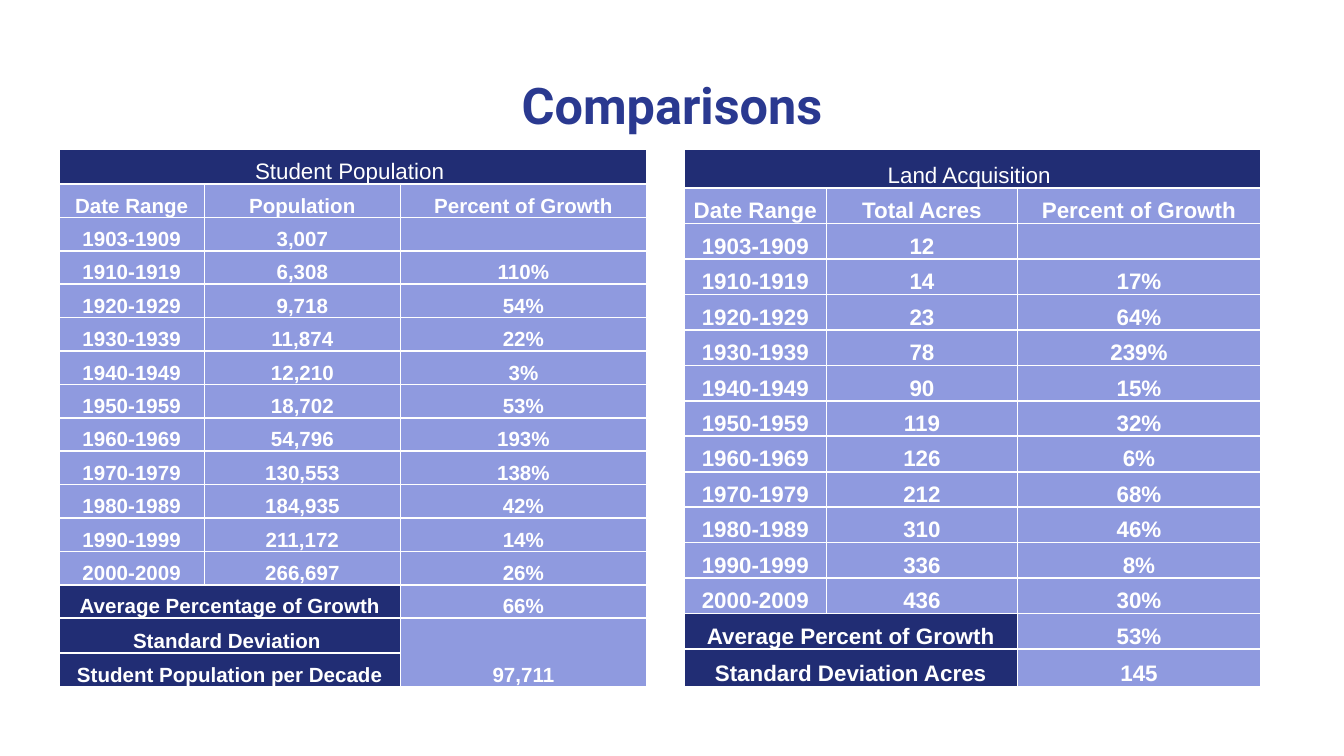
from dataclasses import dataclass

from lxml import etree
from pptx import Presentation
from pptx.dml.color import RGBColor
from pptx.enum import text as t
from pptx.oxml import ns
from pptx.util import Inches, Pt

HUES = {"title": "2A3990", "dark": "212D74", "light": "8F9ADF", "white": "FFFFFF"}
TOP, HIGH = 1.11, 4
DATES = ["1903-1909"] + [f"{y}-{y + 9}" for y in range(1910, 2010, 10)]


@dataclass
class Grid:
    left: float
    cols: list[float]
    size: int
    head: float         # height of the heading row
    tail: list[float]   # heights of the last rows
    name: str
    unit: str
    counts: list[str]
    growth: list[str]
    sums: list[tuple[str, str]]


GRIDS = [
    Grid(0.44, [1.08, 1.46, 1.83], 11, 0.26, [0.26, 0.25],
         "Student Population ", "Population",
         ["3,007", "6,308", "9,718", "11,874", "12,210", "18,702", "54,796",
          "130,553", "184,935", "211,172", "266,697"],
         ["", "110%", "54%", "22%", "3%", "53%", "193%", "138%", "42%", "14%", "26%"],
         [("Average Percentage of Growth", "66%"),
          ("Standard Deviation ", "97,711"),
          ("Student Population per Decade", "")]),
    Grid(5.09, [1.06, 1.42, 1.81], 12, 0.29, [0.28],
         "Land Acquisition ", "Total Acres",
         ["12", "14", "23", "78", "90", "119", "126", "212", "310", "336", "436"],
         ["", "17%", "64%", "239%", "15%", "32%", "6%", "68%", "46%", "8%", "30%"],
         [("Average Percent of Growth", "53%"),
          ("Standard Deviation Acres", "145")]),
]


def style(font, size: float, face: str, hue: str, bold: bool) -> None:
    for key, val in {"size": Pt(size), "name": face, "bold": bold}.items():
        setattr(font, key, val)
    font.color.rgb = RGBColor.from_string(HUES[hue])


def edge(cell) -> None:
    """Draw a white one-point line on all four sides."""
    props = cell._tc.get_or_add_tcPr()
    for spot, side in enumerate("LRTB"):
        line = etree.Element(ns.qn(f"a:ln{side}"), w=str(Pt(1)))
        fill = etree.SubElement(line, ns.qn("a:solidFill"))
        etree.SubElement(fill, ns.qn("a:srgbClr"), val=HUES["white"])
        props.insert(spot, line)


def paint(cell, words: str, size: float, hue: str, bold: bool) -> None:
    cell.fill.solid()
    cell.fill.fore_color.rgb = RGBColor.from_string(HUES[hue])
    edge(cell)
    form = {"vertical_anchor": t.MSO_ANCHOR.BOTTOM, "margin_left": 0,
            "margin_right": 0, "margin_top": 0, "margin_bottom": 0}
    for key, val in form.items():
        setattr(cell, key, val)
    para = cell.text_frame.paragraphs[0]
    para.alignment = t.PP_ALIGN.CENTER
    if words:
        run = para.add_run()
        run.text = words
        style(run.font, size, "Arial", "white", bold)
    else:  # keeps an empty cell from stretching its row
        etree.SubElement(para._p, ns.qn("a:endParaRPr"), sz=str(size * 100))


def draw(slide, grid: Grid) -> None:
    rows = [(grid.name, "", ""), ("Date Range", grid.unit, "Percent of Growth")]
    rows += zip(DATES, grid.counts, grid.growth)
    first = len(rows)
    rows += [(label, "", value) for label, value in grid.sums]

    table = slide.shapes.add_table(
        len(rows), 3, Inches(grid.left), Inches(TOP),
        Inches(sum(grid.cols)), Inches(HIGH)).table
    table.first_row = table.horz_banding = False

    # Column widths, and row heights that share what head and tail leave
    for col, wide in zip(table.columns, grid.cols):
        col.width = Inches(wide)
    count = len(rows) - 1 - len(grid.tail)
    even = (HIGH - grid.head - sum(grid.tail)) / count
    for row, tall in zip(table.rows, [grid.head] + [even] * count + grid.tail):
        row.height = Inches(tall)

    # Cells
    for r, row in enumerate(rows):
        for c, words in enumerate(row):
            dark = r == 0 or (r >= first and c < 2)
            paint(table.cell(r, c), words, 12 if r == 0 else grid.size,
                  "dark" if dark else "light", r > 0)

    # Merged cells: heading, summary labels, and a value with no successor
    table.cell(0, 0).merge(table.cell(0, 2))
    for r in range(first, len(rows)):
        table.cell(r, 0).merge(table.cell(r, 1))
        if not rows[r][2]:
            table.cell(r - 1, 2).merge(table.cell(r, 2))


def main() -> None:
    deck = Presentation()
    deck.slide_width = Inches(10)
    deck.slide_height = deck.slide_width * 9 // 16
    slide = deck.slides.add_slide(deck.slide_layouts[5])

    # Title
    title = slide.shapes.title
    place = {"left": 0.34, "top": 0.45, "width": 9.32, "height": 0.66}
    for key, val in place.items():
        setattr(title, key, Inches(val))
    frame = title.text_frame
    frame.text = "Comparisons"
    form = {"auto_size": t.MSO_AUTO_SIZE.NONE, "vertical_anchor": t.MSO_ANCHOR.MIDDLE}
    form |= {f"margin_{side}": Inches(0.1) for side in ("left", "right", "top", "bottom")}
    for key, val in form.items():
        setattr(frame, key, val)
    para = frame.paragraphs[0]
    para.alignment = t.PP_ALIGN.CENTER
    style(para.runs[0].font, 27, "Roboto", "title", True)

    # Tables
    for grid in GRIDS:
        draw(slide, grid)

    deck.save("out.pptx")


if __name__ == "__main__":
    main()
